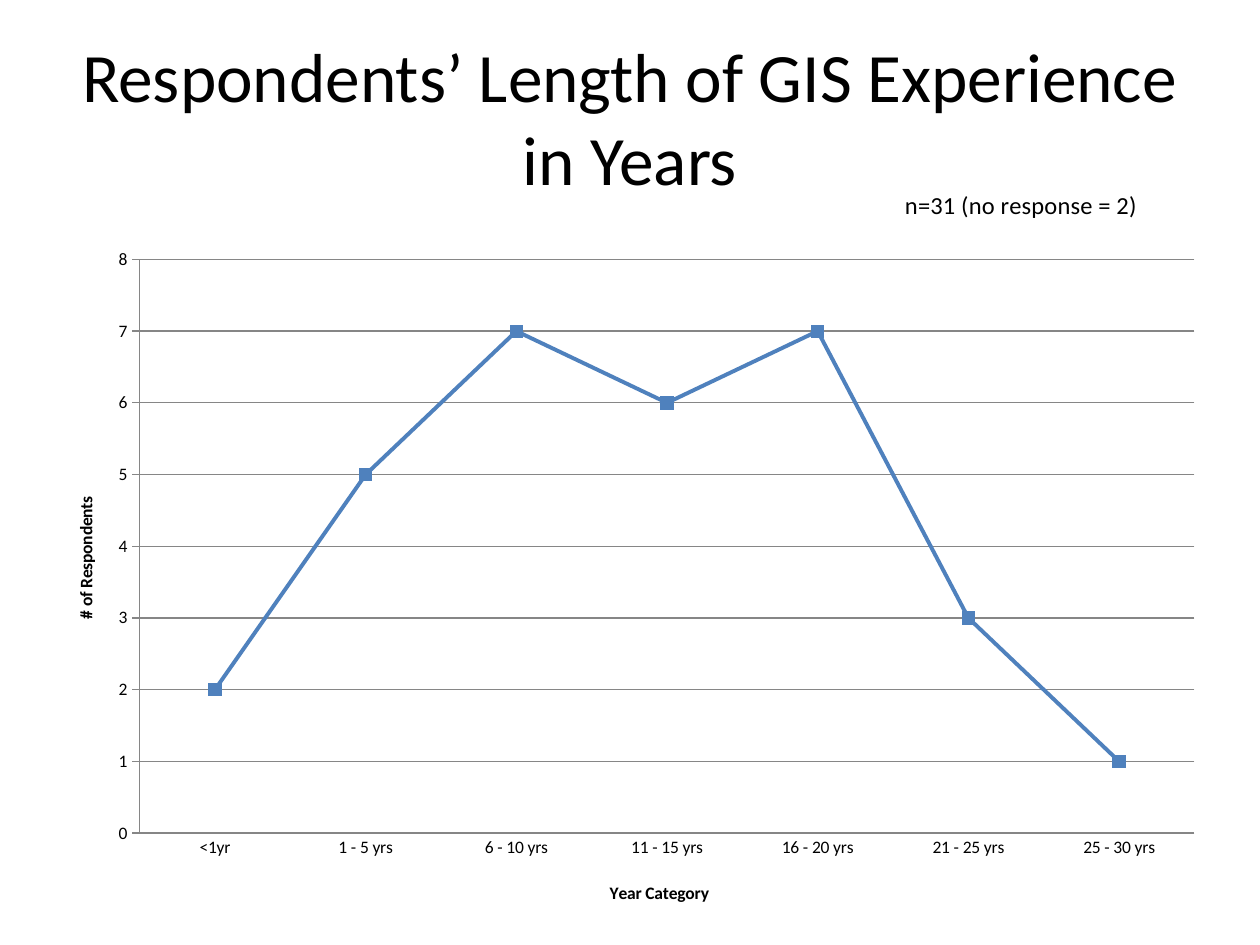
import pptx
import pptx.chart.data
import pptx.dml.color
import pptx.enum.chart
import pptx.enum.text
import pptx.oxml
import pptx.oxml.ns
import pptx.util

FONT = "Calibri"
BLACK, GRID_GREY, LINE_BLUE = "000000", "868686", "4F81BD"
WIDTH, HEIGHT = pptx.util.Inches(10), pptx.util.Inches(7.5)
RESPONDENTS = {
    "<1yr": 2,
    "1 - 5 yrs": 5,
    "6 - 10 yrs": 7,
    "11 - 15 yrs": 6,
    "16 - 20 yrs": 7,
    "21 - 25 yrs": 3,
    "25 - 30 yrs": 1,
}


def rgb(colour):
    return pptx.dml.color.RGBColor.from_string(colour)


def share(left, top, width, height):
    """Turn shares of the slide's size into a box."""
    return [round(part * whole) for part, whole in
            zip((left, top, width, height), (WIDTH, HEIGHT) * 2)]


def style_font(font, size, bold=False, colour=BLACK):
    font.name, font.size, font.bold = FONT, pptx.util.Pt(size), bold
    font.color.rgb = rgb(colour)


def write(frame, text, align=pptx.enum.text.PP_ALIGN.CENTER, **style):
    paragraph = frame.paragraphs[0]
    paragraph.alignment = align
    run = paragraph.add_run()
    run.text = text
    style_font(run.font, **style)


def place_in_chart(part, **shares):
    """Fix a title or plot area at shares of the chart's size."""
    for old in part.findall(pptx.oxml.ns.qn("c:layout")):
        part.remove(old)
    target = '<c:layoutTarget val="inner"/>' if "w" in shares else ""
    modes = "".join(f'<c:{key}Mode val="edge"/>' for key in shares if key in "xy")
    values = "".join(f'<c:{key} val="{value}"/>' for key, value in shares.items())
    layout = pptx.oxml.parse_xml(
        f'<c:layout {pptx.oxml.ns.nsdecls("c")}><c:manualLayout>'
        f"{target}{modes}{values}</c:manualLayout></c:layout>")
    text = part.find(pptx.oxml.ns.qn("c:tx"))
    part.insert(0 if text is None else part.index(text) + 1, layout)


def add_heading(slide, box):
    frame = slide.shapes.add_textbox(*box).text_frame
    frame.word_wrap = True
    frame.vertical_anchor = pptx.enum.text.MSO_ANCHOR.MIDDLE
    write(frame, "Respondents’ Length of GIS Experience in Years", size=39.6)


def style_axis(axis, title, tick_mark, x, y):
    axis.major_tick_mark = tick_mark
    axis.minor_tick_mark = pptx.enum.chart.XL_TICK_MARK.NONE
    axis.format.line.color.rgb = rgb(GRID_GREY)
    style_font(axis.tick_labels.font, size=10)
    write(axis.axis_title.text_frame, title, size=10, bold=True)
    place_in_chart(axis.axis_title._element, x=x, y=y)


def style_series(series):
    series.smooth = False
    series.format.line.color.rgb = rgb(LINE_BLUE)
    series.format.line.width = pptx.util.Pt(2.25)
    marker = series.marker
    marker.style = pptx.enum.chart.XL_MARKER_STYLE.SQUARE
    marker.size = 7
    marker.format.fill.solid()
    marker.format.fill.fore_color.rgb = rgb(LINE_BLUE)
    marker.format.line.color.rgb = rgb(LINE_BLUE)


def add_experience_chart(slide, box):
    data = pptx.chart.data.CategoryChartData()
    data.categories = list(RESPONDENTS)
    data.add_series("Series 1", list(RESPONDENTS.values()))
    chart = slide.shapes.add_chart(
        pptx.enum.chart.XL_CHART_TYPE.LINE_MARKERS, *box, data).chart
    style_font(chart.font, size=10)
    chart.has_legend = False
    write(chart.chart_title.text_frame, "n=31 (no response = 2)", size=14)
    place_in_chart(chart.chart_title._element, x=0.73, y=0.02)

    plot = chart.plots[0]
    plot.vary_by_categories = False
    place_in_chart(plot._element.getparent(), x=0.083, y=0.121, w=0.897, h=0.759)
    style_series(plot.series[0])

    ticks = pptx.enum.chart.XL_TICK_MARK
    style_axis(chart.category_axis, "Year Category", ticks.NONE, x=0.48, y=0.94)
    counts = chart.value_axis
    style_axis(counts, "# of Respondents", ticks.OUTSIDE, x=0.025, y=0.43)
    counts.minimum_scale, counts.maximum_scale, counts.major_unit = 0, 8, 1
    counts.has_major_gridlines = True
    counts.major_gridlines.format.line.color.rgb = rgb(GRID_GREY)


def main():
    deck = pptx.Presentation()
    deck.slide_width, deck.slide_height = WIDTH, HEIGHT
    slide = deck.slides.add_slide(deck.slide_layouts[6])
    add_heading(slide, share(0.05, 0.04, 0.9, 1 / 6))
    add_experience_chart(slide, share(1 / 30, 8 / 45, 14 / 15, 0.8))
    deck.save("out.pptx")


if __name__ == "__main__":
    main()
